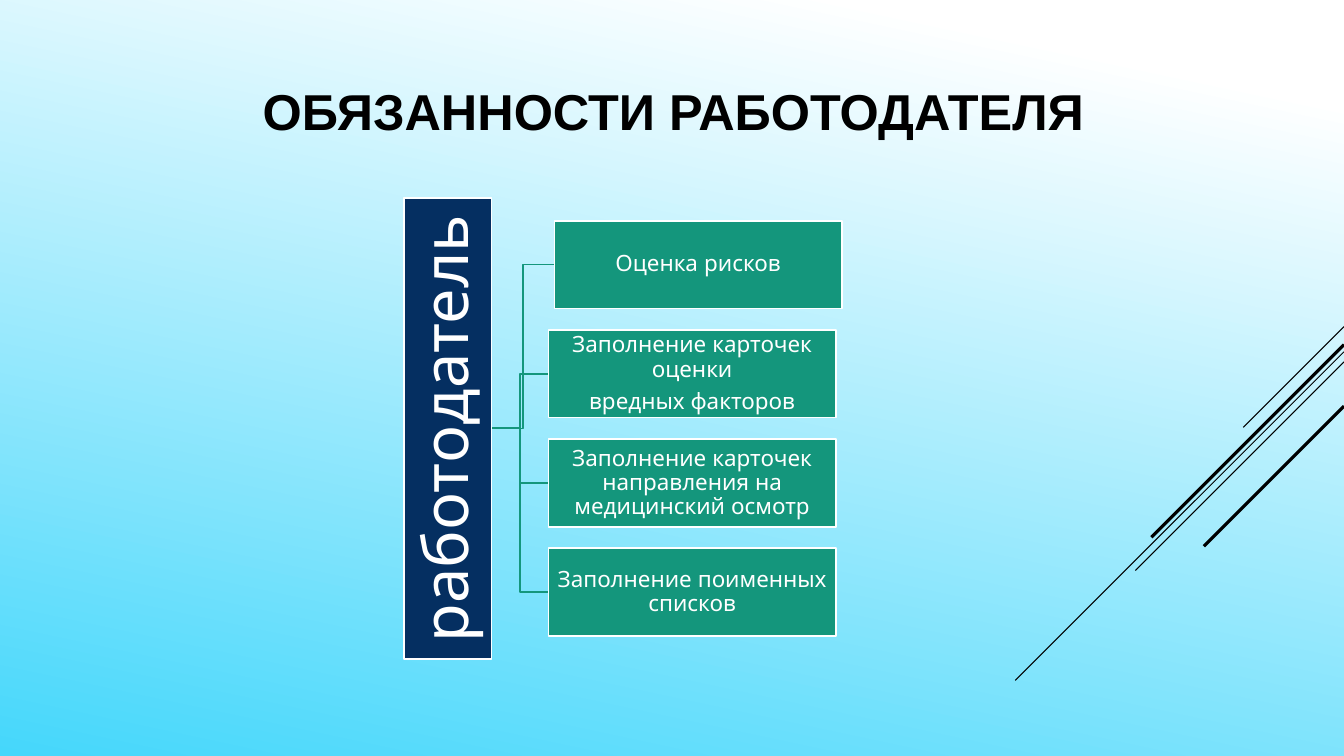
from lxml import etree
from pptx import Presentation
from pptx.dml.color import RGBColor
from pptx.enum import shapes, text
from pptx.oxml.ns import qn
from pptx.util import Inches, Pt

COLORS = {
    "white": "FFFFFF",
    "sky": "45D7FB",
    "black": "000000",
    "navy": "052F61",
    "green": "14967C",
}


class SlideBuilder:
    """Holds the style and the current slide."""

    body_font = "Quicksand"
    title_font = "Arial"
    outline = 1.25

    def __init__(self, slide):
        self.slide = slide

    def color(self, name):
        return RGBColor.from_string(COLORS[name])

    def background(self, start, end, angle):
        fill = self.slide.background.fill
        fill.gradient()
        fill.gradient_angle = angle
        for stop, (name, position) in zip(fill.gradient_stops, (start, end)):
            stop.color.rgb = self.color(name)
            stop.position = position

    def stroke(self, shape, name, width):
        shape.line.color.rgb = self.color(name)
        shape.line.width = Pt(width)

    def add_words(self, shape, paragraphs, font, size, color, bold=False, inset=0.0):
        frame = shape.text_frame
        frame.word_wrap = True
        frame.vertical_anchor = text.MSO_ANCHOR.MIDDLE
        frame.margin_left = frame.margin_right = Inches(inset)
        frame.margin_top = frame.margin_bottom = Inches(inset)
        for index, words in enumerate(paragraphs):
            paragraph = frame.paragraphs[0] if index == 0 else frame.add_paragraph()
            paragraph.alignment = text.PP_ALIGN.CENTER
            paragraph.line_spacing = 0.9
            paragraph.space_after = Pt(0 if bold else size * 0.35)
            run = paragraph.add_run()
            run.text = words
            run.font.name = font
            run.font.size = Pt(size)
            run.font.bold = bold
            run.font.color.rgb = self.color(color)

    def title(self, words, left, top, width, height):
        box = self.slide.shapes.add_textbox(
            Inches(left), Inches(top), Inches(width), Inches(height))
        self.add_words(box, [words], self.title_font, 36, "black", bold=True)

    def box(self, paragraphs, left, top, width, height, fill, size, inset, rotation=0):
        shape = self.slide.shapes.add_shape(
            shapes.MSO_SHAPE.RECTANGLE,
            Inches(left), Inches(top), Inches(width), Inches(height))
        shape.shadow.inherit = False
        shape.rotation = rotation
        shape.fill.solid()
        shape.fill.fore_color.rgb = self.color(fill)
        self.stroke(shape, "white", self.outline)
        self.add_words(shape, paragraphs, self.body_font, size, "white", inset=inset)

    def line(self, start, end, width):
        connector = self.slide.shapes.add_connector(
            shapes.MSO_CONNECTOR.STRAIGHT, *map(Inches, (*start, *end)))
        self.stroke(connector, "black", width)
        etree.SubElement(connector._element.spPr, qn("a:effectLst"))

    def elbow(self, start, end):
        middle = (start[0] + end[0]) / 2
        points = [(middle, start[1]), (middle, end[1]), end]
        builder = self.slide.shapes.build_freeform(*map(Inches, start))
        builder.add_line_segments(
            [(Inches(x), Inches(y)) for x, y in points], close=False)
        shape = builder.convert_to_shape()
        shape.shadow.inherit = False
        shape.fill.background()
        self.stroke(shape, "green", self.outline)


def main():
    presentation = Presentation()
    presentation.slide_width = Inches(13.33)
    presentation.slide_height = Inches(7.5)
    slide = presentation.slides.add_slide(presentation.slide_layouts[6])
    builder = SlideBuilder(slide)

    # Background and 45-degree lines running in from the right edge
    builder.background(("white", 0.1), ("sky", 1.0), angle=258)
    right = 13.33
    for top, run, width in [(3.24, 1.0, 0.75), (3.49, 3.26, 0.75), (3.59, 2.07, 0.75),
                            (3.42, 1.91, 2.25), (4.03, 1.39, 2.25)]:
        builder.line((right, top), (right - run, top + run), width)

    # Title
    builder.title("ОБЯЗАННОСТИ РАБОТОДАТЕЛЯ", 0.75, 0.31, 11.86, 1.65)

    # Duties: left edge and paragraphs of each box
    duties = [
        (5.5, ["Оценка рисков"]),
        (5.44, ["Заполнение карточек оценки", "вредных факторов"]),
        (5.44, ["Заполнение карточек направления на медицинский осмотр"]),
        (5.44, ["Заполнение поименных списков"]),
    ]
    box_width, box_height = 2.85, 0.87
    first_top, last_top = 2.19, 5.44
    pitch = (last_top - first_top) / (len(duties) - 1)
    tops = [first_top + index * pitch for index in range(len(duties))]

    # Elbow lines from the employer bar to the duties
    bar_length, bar_center = 4.57, (4.44, 4.25)
    bar_right = (bar_center[0] + box_height / 2, bar_center[1])
    for (left, _), top in reversed(list(zip(duties, tops))):
        builder.elbow(bar_right, (left, top + box_height / 2))

    # Employer bar, turned to read upwards
    builder.box(["работодатель"], bar_center[0] - bar_length / 2,
                bar_center[1] - box_height / 2, bar_length, box_height,
                "navy", 45, 0.03, rotation=270)

    # Duty boxes
    for (left, paragraphs), top in zip(duties, tops):
        builder.box(paragraphs, left, top, box_width, box_height, "green", 16, 0.01)

    presentation.save("out.pptx")


if __name__ == "__main__":
    main()
